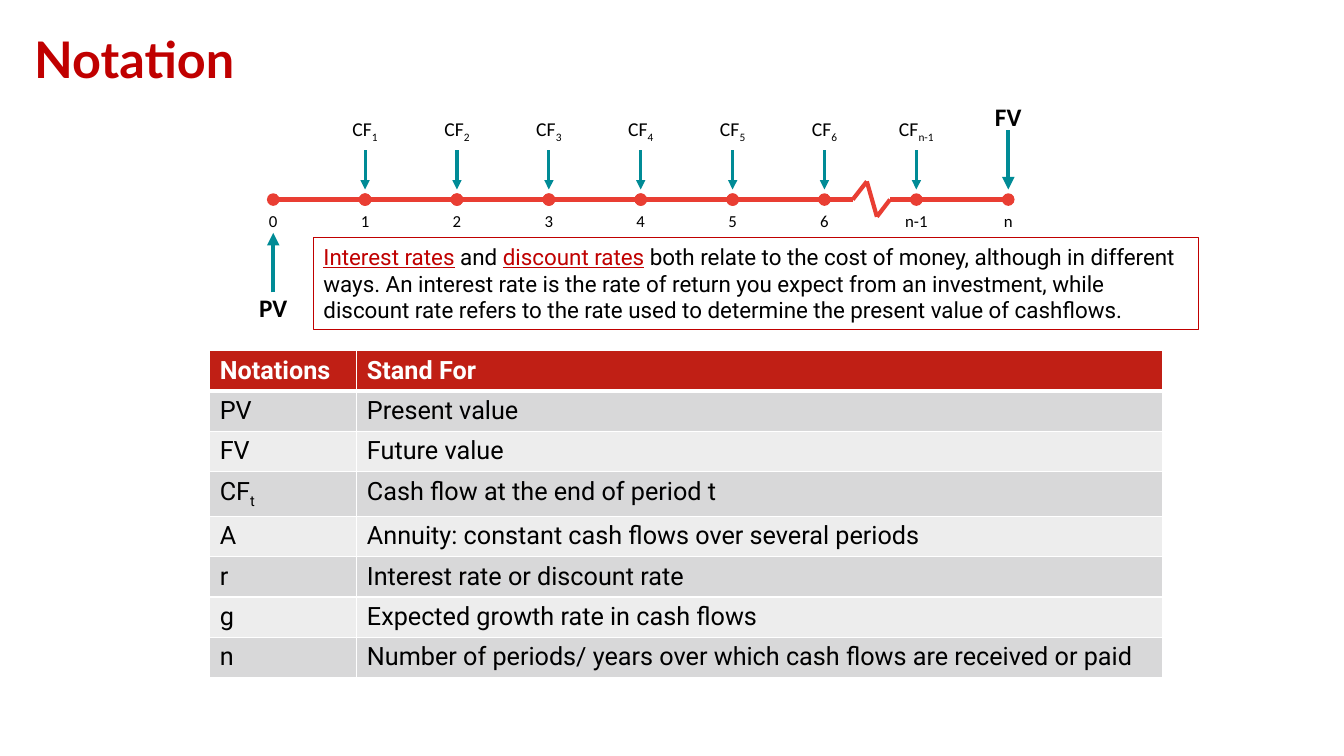
from itertools import pairwise

from lxml import etree
from pptx import Presentation
from pptx.dml.color import RGBColor
from pptx.enum import shapes, text
from pptx.oxml import ns
from pptx.util import Inches, Pt

RED = RGBColor(0xC0, 0x00, 0x00)
LINE_RED = RGBColor(0xE9, 0x3E, 0x33)
TEAL = RGBColor(0x00, 0x8B, 0x96)
HEADER = RGBColor(0xC0, 0x1F, 0x15)
BANDS = (RGBColor(0xD8, 0xD8, 0xD9), RGBColor(0xED, 0xED, 0xED))
BLACK = RGBColor(0, 0, 0)
WHITE = RGBColor(0xFF, 0xFF, 0xFF)

PERIODS = ["0", "1", "2", "3", "4", "5", "6", "n-1", "n"]
NOTATIONS = [
    ("Notations", "Stand For"),
    ("PV", "Present value"),
    ("FV", "Future value"),
    ("CF", "Cash flow at the end of period t"),
    ("A", "Annuity: constant cash flows over several periods"),
    ("r", "Interest rate or discount rate"),
    ("g", "Expected growth rate in cash flows"),
    ("n", "Number of periods/ years over which cash flows are received or paid"),
]


def add_run(p, words, size=18, font="Roboto", color=BLACK, bold=False,
            underline=False, sub=False):
    r = p.add_run()
    r.text = words
    f = r.font
    f.size, f.name, f.bold, f.underline = Pt(size), font, bold, underline
    f.color.rgb = color
    if sub:
        r._r.get_or_add_rPr().set("baseline", "-25000")


def add_label(slide, cx, top, width, height, words, sub="", **fmt):
    """Text centred on cx, with an optional subscript."""
    sp = slide.shapes.add_textbox(Inches(cx - width / 2), Inches(top),
                                  Inches(width), Inches(height))
    tf = sp.text_frame
    tf.word_wrap = False
    p = tf.paragraphs[0]
    p.alignment = text.PP_ALIGN.CENTER
    add_run(p, words, font="Calibri", **fmt)
    if sub:
        add_run(p, sub, font="Calibri", sub=True, **fmt)


def add_line(slide, start, end, color, width=3, head=None, tail=None):
    points = [Inches(v) for v in (*start, *end)]
    sp = slide.shapes.add_connector(shapes.MSO_CONNECTOR.STRAIGHT, *points)
    sp.line.color.rgb = color
    sp.line.width = Pt(width)
    ln = sp.line._get_or_add_ln()
    for tag, kind in (("a:headEnd", head), ("a:tailEnd", tail)):
        if kind:
            etree.SubElement(ln, ns.qn(tag)).set("type", kind)
    etree.SubElement(sp._element.spPr, ns.qn("a:effectLst"))


def add_title(slide, left, top, width, height):
    sp = slide.shapes.add_textbox(Inches(left), Inches(top), Inches(width), Inches(height))
    tf = sp.text_frame
    tf.word_wrap = True
    tf.vertical_anchor = text.MSO_ANCHOR.MIDDLE
    p = tf.paragraphs[0]
    p.line_spacing = 0.9
    add_run(p, "Notation", size=36, font="Lato", color=RED, bold=True)


def add_timeline(slide, left, axis, width):
    step = width / (len(PERIODS) - 1)
    xs = [left + i * step for i in range(len(PERIODS))]
    last = len(PERIODS) - 1

    # Axis, broken between periods 6 and n-1
    for i, (a, b) in enumerate(pairwise(xs)):
        if i != 6:
            add_line(slide, (a, axis), (b, axis), LINE_RED, head="oval", tail="oval")
    x6 = xs[6]
    zigzag = [(x6, axis), (x6 + 0.28, axis), (x6 + 0.42, axis - 0.18),
              (x6 + 0.52, axis + 0.17), (x6 + 0.65, axis), (xs[7], axis)]
    for a, b in pairwise(zigzag):
        add_line(slide, a, b, LINE_RED)

    # Period labels and cash flows
    for i, (x, period) in enumerate(zip(xs, PERIODS)):
        add_label(slide, x, axis + 0.06, 0.44, 0.3, period, size=12)
        if 0 < i < last:
            add_line(slide, (x, axis - 0.49), (x, axis - 0.1), TEAL, 2.25, tail="triangle")
            add_label(slide, x, axis - 0.87, 0.65, 0.34, "CF", sub=period, size=14)

    # Present and future value
    add_line(slide, (xs[0], axis + 0.92), (xs[0], axis + 0.33), TEAL, tail="triangle")
    add_label(slide, xs[0], axis + 0.87, 0.54, 0.4, "PV", bold=True)
    add_line(slide, (xs[last], axis - 0.69), (xs[last], axis - 0.1), TEAL, tail="triangle")
    add_label(slide, xs[last], axis - 1.02, 0.54, 0.4, "FV", bold=True)


def add_rates_note(slide, left, top, width, height):
    sp = slide.shapes.add_shape(shapes.MSO_SHAPE.RECTANGLE, Inches(left), Inches(top),
                                Inches(width), Inches(height))
    sp.shadow.inherit = False
    sp.fill.background()
    sp.line.color.rgb = RED
    sp.line.width = Pt(0.75)
    tf = sp.text_frame
    tf.word_wrap = True
    tf.vertical_anchor = text.MSO_ANCHOR.TOP
    p = tf.paragraphs[0]
    p.alignment = text.PP_ALIGN.LEFT
    add_run(p, "Interest rates", size=16, color=RED, underline=True)
    add_run(p, " and ", size=16)
    add_run(p, "discount rates", size=16, color=RED, underline=True)
    add_run(p, " both relate to the cost of money, although in different ways. "
               "An interest rate is the rate of return you expect from an investment, "
               "while discount rate refers to the rate used to determine the present "
               "value of cashflows.", size=16)


def set_borders(cell, **widths):
    tc_pr = cell._tc.get_or_add_tcPr()
    for i, side in enumerate("LRTB"):
        ln = etree.Element(ns.qn(f"a:ln{side}"), w=str(Pt(widths.get(side, 1))))
        fill = etree.SubElement(ln, ns.qn("a:solidFill"))
        etree.SubElement(fill, ns.qn("a:srgbClr")).set("val", str(WHITE))
        tc_pr.insert(i, ln)


def add_notation_table(slide, left, top, width, height, first_col):
    table = slide.shapes.add_table(len(NOTATIONS), 2, Inches(left), Inches(top),
                                   Inches(width), Inches(height)).table
    table.columns[0].width = Inches(first_col)
    table.columns[1].width = Inches(width - first_col)
    for i, row in enumerate(NOTATIONS):
        is_header = i == 0
        for j, words in enumerate(row):
            cell = table.cell(i, j)
            cell.fill.solid()
            cell.fill.fore_color.rgb = HEADER if is_header else BANDS[(i - 1) % 2]
            p = cell.text_frame.paragraphs[0]
            add_run(p, words, color=WHITE if is_header else BLACK, bold=is_header)
            if words == "CF":
                add_run(p, "t", sub=True)
            set_borders(cell, B=3 if is_header else 1, T=3 if i == 1 else 1)


def main():
    prs = Presentation()
    prs.slide_width, prs.slide_height = Inches(13.33), Inches(7.5)
    slide = prs.slides.add_slide(prs.slide_layouts[6])
    add_timeline(slide, 2.71, 1.98, 7.29)
    add_notation_table(slide, 2.08, 3.48, 9.45, 3.12, first_col=1.46)
    add_rates_note(slide, 3.11, 2.36, 8.78, 0.91)
    add_title(slide, 0.24, -0.02, 11.5, 1.28)
    prs.save("out.pptx")


if __name__ == "__main__":
    main()
